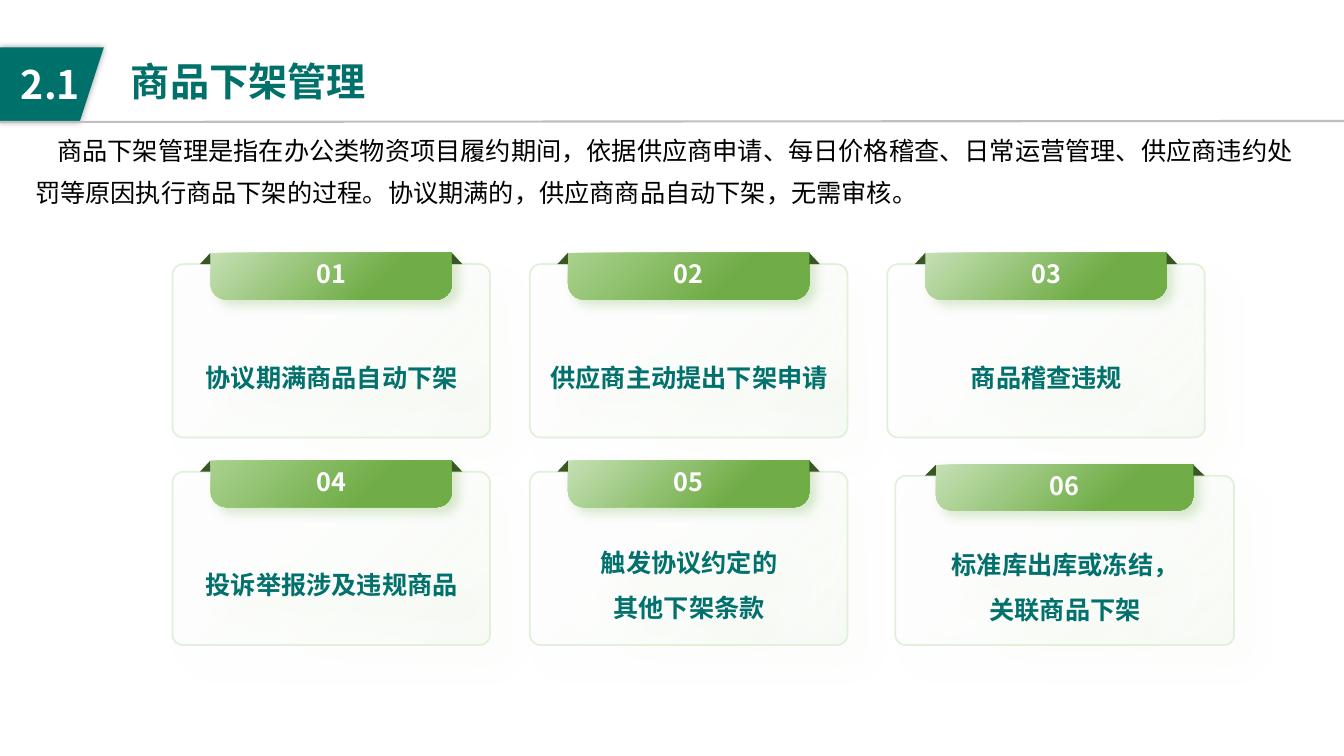
from lxml import etree
from pptx import Presentation
from pptx.dml.color import RGBColor as Rgb
from pptx.enum.shapes import MSO_CONNECTOR as Link, MSO_SHAPE as Kind
from pptx.enum.text import MSO_ANCHOR as Anchor, PP_ALIGN as Align
from pptx.oxml import parse_xml
from pptx.oxml.ns import qn
from pptx.util import Inches, Pt

NUMBER = "2.1"
TITLE = "商品下架管理"
INTRO = ("商品下架管理是指在办公类物资项目履约期间，依据供应商申请、每日价格稽查、"
         "日常运营管理、供应商违约处罚等原因执行商品下架的过程。"
         "协议期满的，供应商商品自动下架，无需审核。")
CARDS = [
    ["协议期满商品自动下架"],
    ["供应商主动提出下架申请"],
    ["商品稽查违规"],
    ["投诉举报涉及违规商品"],
    ["触发协议约定的", "其他下架条款"],
    ["标准库出库或冻结，", "关联商品下架"],
]
COLORS = {
    "teal": "00706B", "label": "02716D", "white": "FFFFFF", "black": "000000",
    "rule": "BFBFBF", "pale": "E2F0D9", "light": "C5E0B4", "mid": "A9D18E",
    "green": "70AD47", "fold": "385723",
}
FONT = "Noto Sans CJK SC"
WIDE, HIGH = 13.33, 7.5

# Card grid: origin, pitch and card size; the last card has its own box
COLS, LEFT, TOP = 3, 1.71, 2.62
STEP_X, STEP_Y = 3.545, 2.06
CARD_W, CARD_H = 3.15, 1.72
LAST_BOX = (8.88, 4.72, 3.36, 1.68)

BODY = {"color": "label", "bold": True, "align": Align.CENTER, "spacing": 1.5}
HEAD = {"color": "white", "bold": True, "align": Align.CENTER}
PALE_GLOW = ([(0, "pale", 20), (100, "white", 0)],
             '<a:path path="circle"><a:fillToRect l="100000" t="100000"/></a:path>')
SLANT = '<a:lin ang="2700000" scaled="0"/>'
XMLNS = 'xmlns:a="http://schemas.openxmlformats.org/drawingml/2006/main"'

deck = Presentation()
deck.slide_width, deck.slide_height = Inches(WIDE), Inches(HIGH)
slide = deck.slides.add_slide(deck.slide_layouts[6])
shapes = slide.shapes


def rgb(name):
    return Rgb.from_string(COLORS[name])


def inches(box):
    return [Inches(v) for v in box]


def write(shape, lines, color, size=18, bold=False, align=Align.LEFT,
          spacing=None, anchor=Anchor.MIDDLE, margins=None, wrap=True):
    frame = shape.text_frame
    look = {"word_wrap": wrap, "vertical_anchor": anchor}
    look.update(margins or {})
    for key, value in look.items():
        setattr(frame, key, value)
    for i, line in enumerate(lines):
        para = frame.add_paragraph() if i else frame.paragraphs[0]
        para.alignment = align
        if spacing:
            para.line_spacing = spacing
        run = para.add_run()
        run.text = line
        for key, value in {"size": Pt(size), "bold": bold, "name": FONT}.items():
            setattr(run.font, key, value)
        run.font.color.rgb = rgb(color)
        east = etree.SubElement(run.font._element, qn("a:ea"))
        east.set("typeface", FONT)
    return frame


def paint(shape, fill=None, line=None):
    shape.shadow.inherit = False
    if fill:
        shape.fill.solid()
        shape.fill.fore_color.rgb = rgb(fill)
    if line:
        shape.line.color.rgb = rgb(line)
        shape.line.width = Pt(1.25)
    else:
        shape.line.fill.background()


def blend(shape, stops, shade):
    """Fill with a gradient; each stop is place, colour and opacity in percent."""
    marks = "".join(
        f'<a:gs pos="{pos * 1000}"><a:srgbClr val="{COLORS[name]}">'
        f'<a:alpha val="{alpha * 1000}"/></a:srgbClr></a:gs>'
        for pos, name, alpha in stops)
    shape.fill.background()
    props = shape._element.spPr
    props.replace(props.find(qn("a:noFill")), parse_xml(
        f'<a:gradFill {XMLNS} rotWithShape="1"><a:gsLst>{marks}</a:gsLst>{shade}</a:gradFill>'))


def shade(shape, color, alpha, blur, dist=0):
    shape._element.spPr.find(qn("a:effectLst")).append(parse_xml(
        f'<a:outerShdw {XMLNS} blurRad="{Pt(blur)}" dist="{Pt(dist)}" dir="2700000" '
        f'algn="tl" rotWithShape="0"><a:srgbClr val="{COLORS[color]}">'
        f'<a:alpha val="{alpha * 1000}"/></a:srgbClr></a:outerShdw>'))


def add_text(box, lines, color, **look):
    return write(shapes.add_textbox(*inches(box)), lines, color, anchor=Anchor.TOP, **look)


def add_head():
    pen = shapes.build_freeform(0, Inches(0.47))
    pen.add_line_segments([inches(p) for p in [(1.03, 0.47), (0.79, 1.21), (0, 1.21)]])
    tab = pen.convert_to_shape()
    paint(tab, "teal")
    shade(tab, "black", 40, 5)
    rule = shapes.add_connector(Link.STRAIGHT, *inches((0, 1.21, WIDE, 1.2)))
    rule.line.color.rgb = rgb("rule")
    rule.line.width = Pt(1.5)
    etree.SubElement(rule._element.spPr, qn("a:effectLst"))
    add_text((0.11, 0.55, 0.87, 0.57), [NUMBER], "white", size=28, bold=True)
    add_text((1.2, 0.52, 2.53, 0.57), [TITLE], "teal", size=28, bold=True, wrap=False)


def add_card(index, lines):
    row, col = divmod(index, COLS)
    box = (LEFT + col * STEP_X, TOP + row * STEP_Y, CARD_W, CARD_H)
    if index == len(CARDS) - 1:
        box = LAST_BOX
    x, y, w, h = box
    card = shapes.add_shape(Kind.ROUNDED_RECTANGLE, *inches(box))
    card.adjustments[0] = 0.063
    paint(card, line="pale")
    blend(card, *PALE_GLOW)
    shade(card, "green", 8, 22, 18)
    sides = ("margin_left", "margin_top", "margin_right", "margin_bottom")
    write(card, lines, margins=dict(zip(sides, inches((0.14, 0.47, 0.13, 0.1)))), **BODY)

    fold_w, fold_h = 0.033 * w, 0.065 * h
    x, y, w, h = x + 0.12 * w, y - fold_h, 0.76 * w, 0.27 * h
    band = shapes.add_shape(Kind.ROUND_2_SAME_RECTANGLE, *inches((x, y, w, h)))
    band.adjustments[0], band.adjustments[1] = 0, 0.34
    paint(band)
    first, stop = ("mid", 66) if index in (1, 3) else ("light", 69)
    blend(band, [(0, first, 100), (stop, "green", 100), (100, "green", 100)], SLANT)
    shade(band, "green", 25, 8, 6)
    write(band, [f"{index + 1:02d}"], **HEAD)

    for side, flip in ((x - fold_w, "0"), (x + w, "1")):
        fold = shapes.add_shape(Kind.ISOSCELES_TRIANGLE, *inches((side, y, fold_w, fold_h)))
        fold.adjustments[0] = 1
        fold._element.spPr.find(qn("a:xfrm")).set("flipH", flip)
        paint(fold, "fold")


add_head()
for index, lines in enumerate(CARDS):
    add_card(index, lines)
intro = add_text((0.25, 1.17, 12.85, 1.1), [INTRO], "black", spacing=1.4)
intro.paragraphs[0]._p.get_or_add_pPr().set("indent", str(Inches(0.22)))
deck.save("out.pptx")
